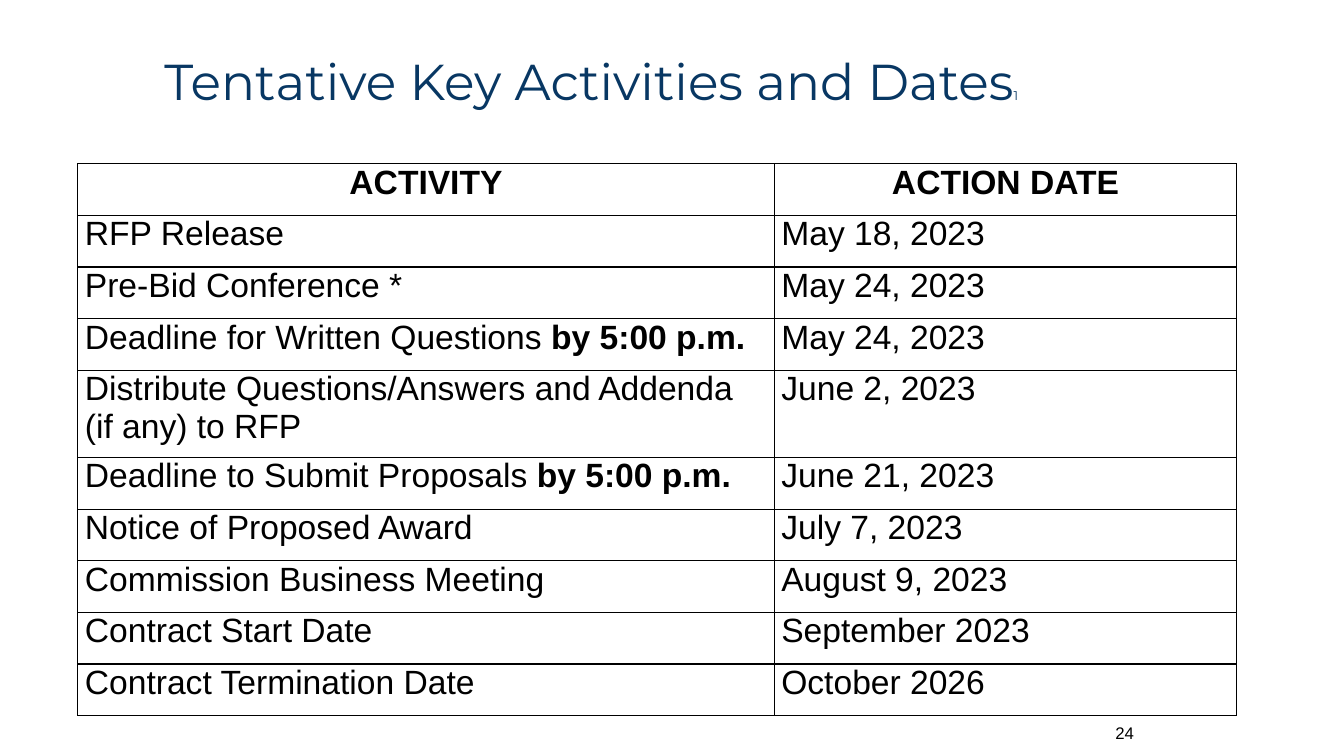
from lxml import etree
from pptx import Presentation, util as u
from pptx.dml.color import RGBColor
from pptx.enum import text
from pptx.oxml.ns import qn

Cm, Pt = u.Cm, u.Pt
BLACK, NAVY = "000000", "083763"
LEFT, CENTER, RIGHT = text.PP_ALIGN.LEFT, text.PP_ALIGN.CENTER, text.PP_ALIGN.RIGHT


def add_run(p, words, size, color=BLACK, name="Arial", bold=False):
    r = p.add_run()
    r.text = words
    for key, value in dict(size=Pt(size), name=name, bold=bold).items():
        setattr(r.font, key, value)
    r.font.color.rgb = RGBColor.from_string(color)


def add_borders(cell, color=BLACK):
    tcPr = cell._tc.get_or_add_tcPr()
    for side in ("lnL", "lnR", "lnT", "lnB"):
        ln = etree.SubElement(tcPr, qn(f"a:{side}"), w=str(Pt(1)))
        fill = etree.SubElement(ln, qn("a:solidFill"))
        etree.SubElement(fill, qn("a:srgbClr"), val=color)


prs = Presentation()
prs.slide_width, prs.slide_height = Cm(33.87), Cm(19.05)
s = prs.slides.add_slide(prs.slide_layouts[5])

# Title
title = s.shapes.title
title.left, title.top, title.width, title.height = Cm(3.89), Cm(0.66), Cm(27.66), Cm(2.9)
tf = title.text_frame
tf.auto_size = text.MSO_AUTO_SIZE.NONE
tf.vertical_anchor = text.MSO_ANCHOR.MIDDLE
p = tf.paragraphs[0]
p.alignment, p.line_spacing = LEFT, 0.9
add_run(p, "Tentative Key Activities and Dates", 36, NAVY, "Montserrat")
add_run(p, "1", 9, NAVY, "Montserrat")

# Slide number
number = s.shapes.add_textbox(Cm(23.93), Cm(17.96), Cm(4.9), Cm(1.02))
tf = number.text_frame
tf.word_wrap = True
tf.vertical_anchor = text.MSO_ANCHOR.MIDDLE
p = tf.paragraphs[0]
p.alignment = RIGHT
add_run(p, "24", 12)

# Schedule: activity, bold ending, date
schedule = [
    ("RFP Release", "", "May 18, 2023"),
    ("Pre-Bid Conference *", "", "May 24, 2023"),
    ("Deadline for Written Questions ", "by 5:00 p.m.", "May 24, 2023"),
    ("Distribute Questions/Answers and Addenda (if any) to RFP", "", "June 2, 2023"),
    ("Deadline to Submit Proposals ", "by 5:00 p.m.", "June 21, 2023"),
    ("Notice of Proposed Award", "", "July 7, 2023"),
    ("Commission Business Meeting", "", "August 9, 2023"),
    ("Contract Start Date", "", "September 2023"),
    ("Contract Termination Date", "", "October 2026"),
]
rows = [([("ACTIVITY", True)], [("ACTION DATE", True)])]
for activity, ending, date in schedule:
    runs = [(activity, False)] + ([(ending, True)] if ending else [])
    rows.append((runs, [(date, False)]))

ROW_HEIGHT, TALL_ROW, TALL_HEIGHT = 1.3, 4, 2.2
table = s.shapes.add_table(len(rows), 2, Cm(1.96), Cm(4.13), Cm(29.21), Cm(13.9)).table
table.first_row = table.horz_banding = False
for column, width in zip(table.columns, (17.55, 11.66)):
    column.width = Cm(width)

for i, row in enumerate(rows):
    table.rows[i].height = Cm(TALL_HEIGHT if i == TALL_ROW else ROW_HEIGHT)
    for j, runs in enumerate(row):
        cell = table.cell(i, j)
        cell.margin_left = cell.margin_right = Cm(0.18)
        cell.margin_top = cell.margin_bottom = 0
        add_borders(cell)
        cell.fill.background()
        p = cell.text_frame.paragraphs[0]
        p.alignment = CENTER if i == 0 else LEFT
        p.space_after = Pt(3 if i and j else 6)
        for words, bold in runs:
            add_run(p, words, 24, bold=bold)

prs.save("out.pptx")
